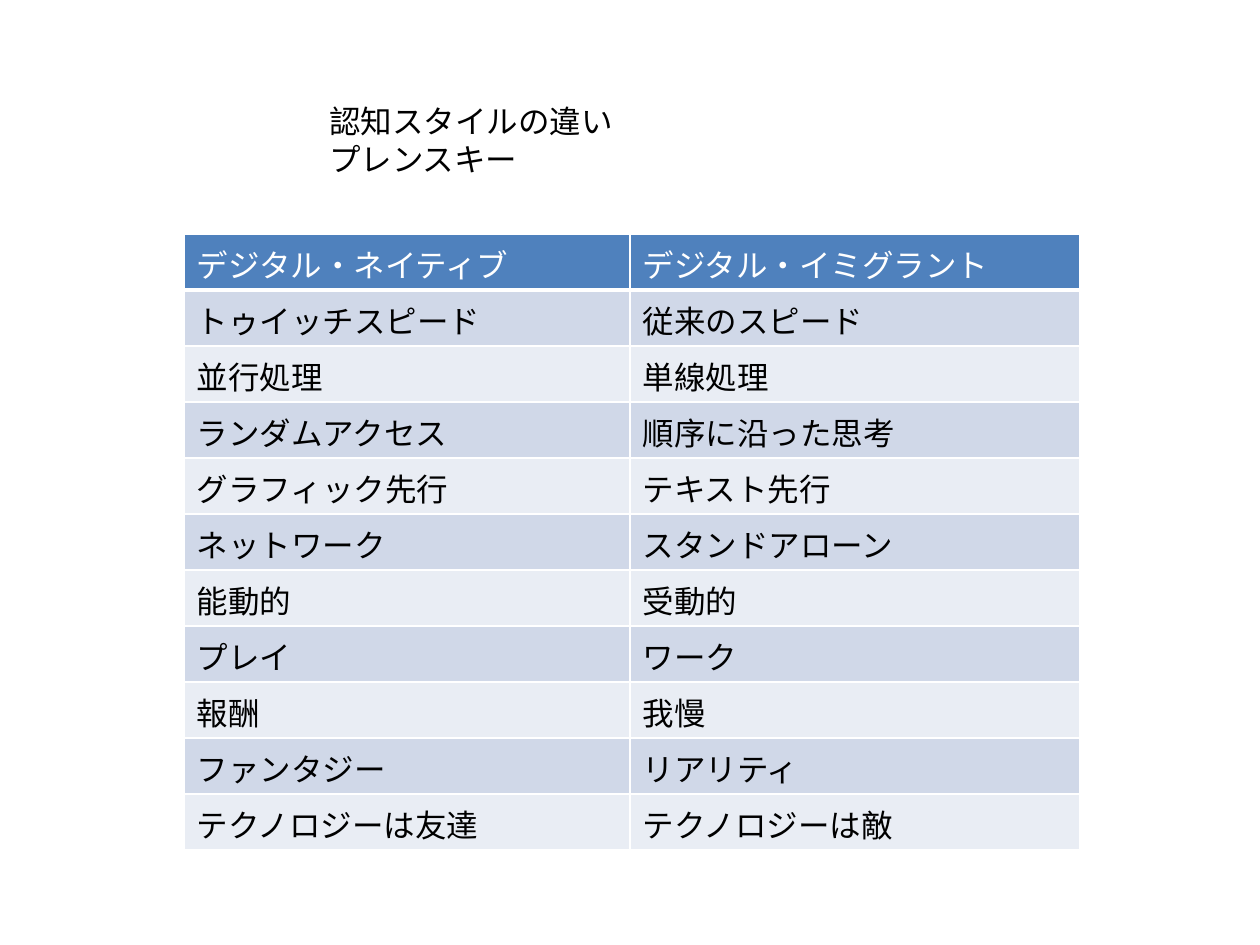
from lxml.etree import SubElement
from pptx import Presentation
from pptx.dml.color import RGBColor
from pptx.enum.text import MSO_ANCHOR, MSO_AUTO_SIZE, PP_ALIGN
from pptx.oxml.ns import qn
from pptx.util import Cm, Pt

WHITE = RGBColor(0xFF, 0xFF, 0xFF)
BLACK = RGBColor(0x00, 0x00, 0x00)
HEADER = RGBColor(0x4F, 0x81, 0xBD)
BANDS = [RGBColor(0xE9, 0xED, 0xF4), RGBColor(0xD0, 0xD8, 0xE8)]

TITLE = ["認知スタイルの違い", "プレンスキー"]
ROWS = [
    ("デジタル・ネイティブ", "デジタル・イミグラント"),
    ("トゥイッチスピード", "従来のスピード"),
    ("並行処理", "単線処理"),
    ("ランダムアクセス", "順序に沿った思考"),
    ("グラフィック先行", "テキスト先行"),
    ("ネットワーク", "スタンドアローン"),
    ("能動的", "受動的"),
    ("プレイ", "ワーク"),
    ("報酬", "我慢"),
    ("ファンタジー", "リアリティ"),
    ("テクノロジーは友達", "テクノロジーは敵"),
]


class SlideBuilder:
    """Holds the text style and the current slide."""

    font_format = {"name": "Calibri", "size": Pt(18), "bold": False}

    def __init__(self, prs):
        self.slide = prs.slides.add_slide(prs.slide_layouts[5])

    def add_lines(self, tf, lines, color):
        for i, line in enumerate(lines):
            p = tf.paragraphs[0] if i == 0 else tf.add_paragraph()
            p.alignment = PP_ALIGN.LEFT
            r = p.add_run()
            r.text = line
            for name, value in self.font_format.items():
                setattr(r.font, name, value)
            r.font.color.rgb = color

    def title(self, lines, left, top, width, height):
        sp = self.slide.shapes.title
        box = {"left": left, "top": top, "width": width, "height": height}
        for name, value in box.items():
            setattr(sp, name, Cm(value))
        tf = sp.text_frame
        frame_format = {"word_wrap": True, "vertical_anchor": MSO_ANCHOR.TOP,
                        "auto_size": MSO_AUTO_SIZE.SHAPE_TO_FIT_TEXT}
        for name, value in frame_format.items():
            setattr(tf, name, value)
        self.add_lines(tf, lines, BLACK)

    def border(self, cell, bottom):
        """Draw white 1 pt edges, with the bottom one at its own width."""
        tc_pr = cell._tc.get_or_add_tcPr()
        widths = {"lnL": 1, "lnR": 1, "lnT": 1, "lnB": bottom}
        for i, (tag, width) in enumerate(widths.items()):
            ln = tc_pr.makeelement(qn(f"a:{tag}"), {"w": str(Pt(width))})
            fill = SubElement(ln, qn("a:solidFill"))
            SubElement(fill, qn("a:srgbClr"), val=str(WHITE))
            tc_pr.insert(i, ln)

    def table(self, rows, left, top, col_widths, row_height):
        frame = self.slide.shapes.add_table(
            len(rows), len(col_widths), Cm(left), Cm(top),
            Cm(sum(col_widths)), Cm(row_height * len(rows)))
        table = frame.table
        for column, width in zip(table.columns, col_widths):
            column.width = Cm(width)
        for i, texts in enumerate(rows):
            table.rows[i].height = Cm(row_height)
            is_header = i == 0
            for j, text in enumerate(texts):
                cell = table.cell(i, j)
                cell.fill.solid()
                cell.fill.fore_color.rgb = HEADER if is_header else BANDS[i % 2]
                self.border(cell, bottom=3 if is_header else 1)
                self.add_lines(cell.text_frame, [text], WHITE if is_header else BLACK)


def main():
    prs = Presentation()
    prs.slide_width, prs.slide_height = Cm(25.4), Cm(19.05)
    s = SlideBuilder(prs)
    s.title(TITLE, 6.38, 1.93, 12.7, 1.8)
    s.table(ROWS, 3.71, 4.72, [8.99, 9.07], 1.13)
    prs.save("out.pptx")


if __name__ == "__main__":
    main()
